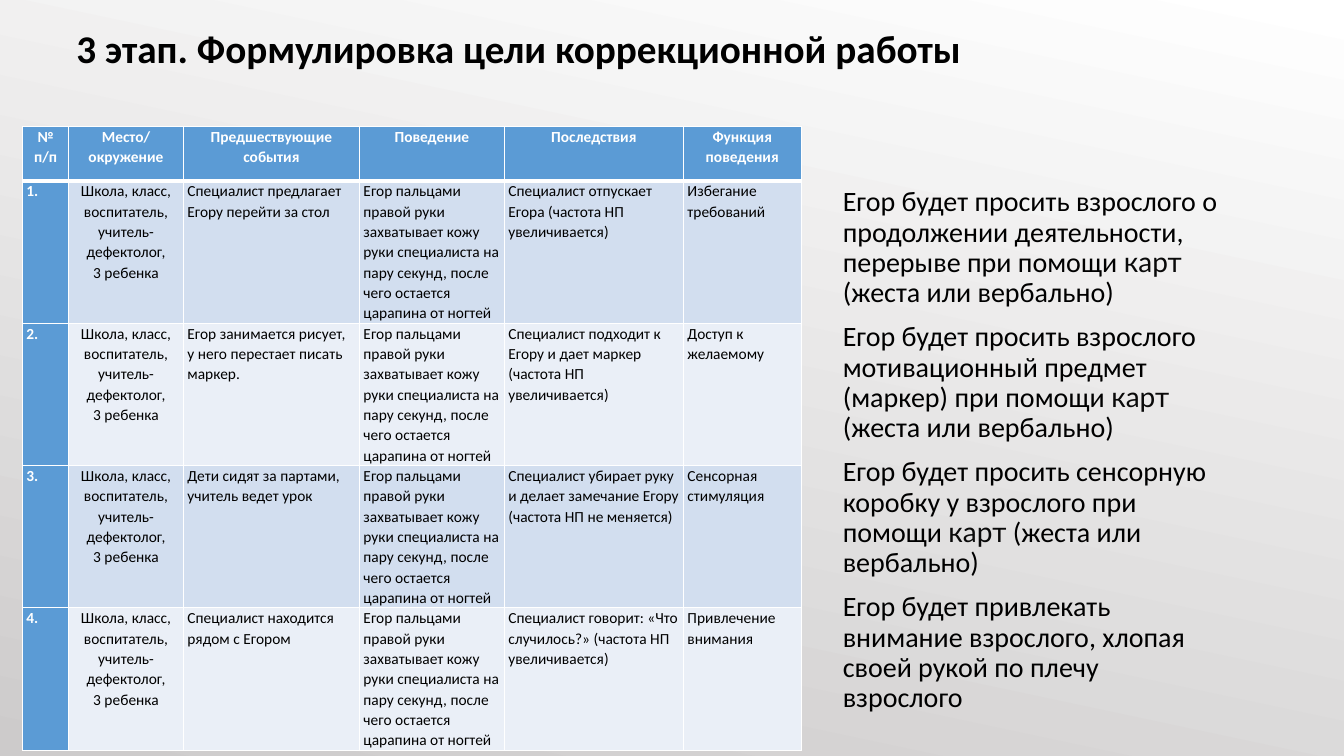
import pptx
import pptx.util
import pptx.dml.color
import pptx.enum.text
import pptx.oxml
import pptx.oxml.ns

COLORS = {
    "text": "000000",
    "method": "0A0A0A",
    "header": "5B9BD5",
    "header_text": "FFFFFF",
    "border": "FFFFFF",
    "odd_row": "D2DEEF",
    "even_row": "EAEFF7",
    "sky": "FFFFFF",
    "ground": "CDCBCB",
}
WIDTH, HEIGHT = pptx.util.Inches(13.33), pptx.util.Inches(7.5)
ALIGN = pptx.enum.text.PP_ALIGN

# Boxes in percent of the slide: left, top, width, height
TITLE_BOX = (4.95, 3.2, 86.27, 9.33)
TABLE_BOX = (1.67, 16.7, 57.95, 82.55)
GOALS_BOX = (61.97, 24.18, 29.93, 75.82)

COLUMN_SHARES = (0.46, 1.14, 1.75, 1.44, 1.78, 1.17)
ROW_SHARES = (0.54, 1.41, 1.41, 1.41, 1.41)
CELL_MARGINS = {"margin_left": 0.04, "margin_right": 0.04, "margin_top": 0, "margin_bottom": 0}

TITLE = "3 этап. Формулировка цели коррекционной работы"
HEADINGS = ("№ п/п", "Место/ окружение", "Предшествующие события",
            "Поведение", "Последствия", "Функция поведения")
SETTING = "Школа, класс, воспитатель, учитель-дефектолог,\n3 ребенка"
BEHAVIOUR = ("Егор пальцами правой руки захватывает кожу руки специалиста "
             "на пару секунд, после чего остается царапина от ногтей")
# Antecedent, consequence, function
EPISODES = (
    ("Специалист предлагает Егору перейти за стол",
     "Специалист отпускает Егора (частота НП увеличивается)",
     "Избегание требований"),
    ("Егор занимается рисует, у него перестает писать маркер.",
     "Специалист подходит к Егору и дает маркер (частота НП увеличивается)",
     "Доступ к желаемому"),
    ("Дети сидят за партами, учитель ведет урок",
     "Специалист убирает руку и делает замечание Егору (частота НП не меняется)",
     "Сенсорная стимуляция"),
    ("Специалист находится рядом с Егором",
     "Специалист говорит: «Что случилось?» (частота НП увеличивается)",
     "Привлечение внимания"),
)
METHOD = "карт"
GOALS = (
    "Егор будет просить взрослого о продолжении деятельности, перерыве "
    "при помощи карт (жеста или вербально)",
    "Егор будет просить взрослого мотивационный предмет (маркер) "
    "при помощи карт (жеста или вербально)",
    "Егор будет просить сенсорную коробку у взрослого "
    "при помощи карт (жеста или вербально)",
    "Егор будет привлекать внимание взрослого, хлопая своей рукой по плечу взрослого",
)


def rgb(color):
    return pptx.dml.color.RGBColor.from_string(COLORS[color])


def to_emu(box):
    """Turn a box in percent of the slide into lengths."""
    return [round(share * side / 100) for share, side in zip(box, (WIDTH, HEIGHT) * 2)]


def add_run(paragraph, text, size, color="text", bold=False, name="Calibri"):
    run = paragraph.add_run()
    run.text = text
    for attribute, value in {"size": pptx.util.Pt(size), "bold": bold, "name": name}.items():
        setattr(run.font, attribute, value)
    run.font.color.rgb = rgb(color)


def add_paragraphs(frame, texts, spacing, before=0, align=ALIGN.LEFT):
    """Yield an empty formatted paragraph with each text."""
    frame.word_wrap = True
    for index, text in enumerate(texts):
        paragraph = frame.add_paragraph() if index else frame.paragraphs[0]
        layout = {"line_spacing": spacing, "alignment": align,
                  "space_before": pptx.util.Pt(before if index else 0)}
        for attribute, value in layout.items():
            setattr(paragraph, attribute, value)
        yield paragraph, text


def paint_background(slide):
    fill = slide.background.fill
    fill.gradient()
    fill.gradient_angle = 258
    for stop, color, position in zip(fill.gradient_stops, ("sky", "ground"), (0, 1)):
        stop.color.rgb = rgb(color)
        stop.position = position


def add_title(slide, box):
    frame = slide.shapes.add_textbox(*to_emu(box)).text_frame
    for paragraph, text in add_paragraphs(frame, [TITLE], 0.9):
        add_run(paragraph, text, 28, bold=True)


def set_borders(cell, widths):
    properties = cell._tc.get_or_add_tcPr()
    for side, width in widths.items():
        properties.append(pptx.oxml.parse_xml(
            f'<a:ln{side} {pptx.oxml.ns.nsdecls("a")} w="{pptx.util.Pt(width)}">'
            f'<a:solidFill><a:srgbClr val="{COLORS["border"]}"/></a:solidFill></a:ln{side}>'))


def fill_cell(cell, text, row, column):
    is_label = row == 0 or column == 0
    for margin, inches in CELL_MARGINS.items():
        setattr(cell, margin, pptx.util.Inches(inches))
    set_borders(cell, {"L": 1, "R": 1, "T": 3 if row == 1 else 1, "B": 3 if row == 0 else 1})
    cell.fill.solid()
    cell.fill.fore_color.rgb = rgb("header" if is_label else "odd_row" if row % 2 else "even_row")
    align = ALIGN.CENTER if row == 0 or column == 1 else ALIGN.LEFT
    for paragraph, line in add_paragraphs(cell.text_frame, text.split("\n"), 1.07, align=align):
        add_run(paragraph, line, 11, "header_text" if is_label else "text", is_label)


def add_episode_table(slide, box):
    left, top, width, height = to_emu(box)
    rows = [HEADINGS] + [
        (f"{number}.", SETTING, antecedent, BEHAVIOUR, consequence, function)
        for number, (antecedent, consequence, function) in enumerate(EPISODES, 1)]
    table = slide.shapes.add_table(len(rows), len(HEADINGS), left, top, width, height).table
    table.first_row = table.horz_banding = False
    for column, share in zip(table.columns, COLUMN_SHARES):
        column.width = round(width * share / sum(COLUMN_SHARES))
    for row, share in zip(table.rows, ROW_SHARES):
        row.height = round(height * share / sum(ROW_SHARES))
    for r, texts in enumerate(rows):
        for c, text in enumerate(texts):
            fill_cell(table.cell(r, c), text, r, c)


def add_goals(slide, box):
    frame = slide.shapes.add_textbox(*to_emu(box)).text_frame
    for paragraph, goal in add_paragraphs(frame, GOALS, 0.9, before=10):
        opening, method, ending = goal.partition(METHOD)
        add_run(paragraph, opening, 20)
        if method:
            add_run(paragraph, method, 20, "method", name="Lato")
            add_run(paragraph, ending, 20)


def main():
    deck = pptx.Presentation()
    deck.slide_width, deck.slide_height = WIDTH, HEIGHT
    slide = deck.slides.add_slide(deck.slide_layouts[6])
    paint_background(slide)
    add_title(slide, TITLE_BOX)
    add_episode_table(slide, TABLE_BOX)
    add_goals(slide, GOALS_BOX)
    deck.save("out.pptx")


if __name__ == "__main__":
    main()
